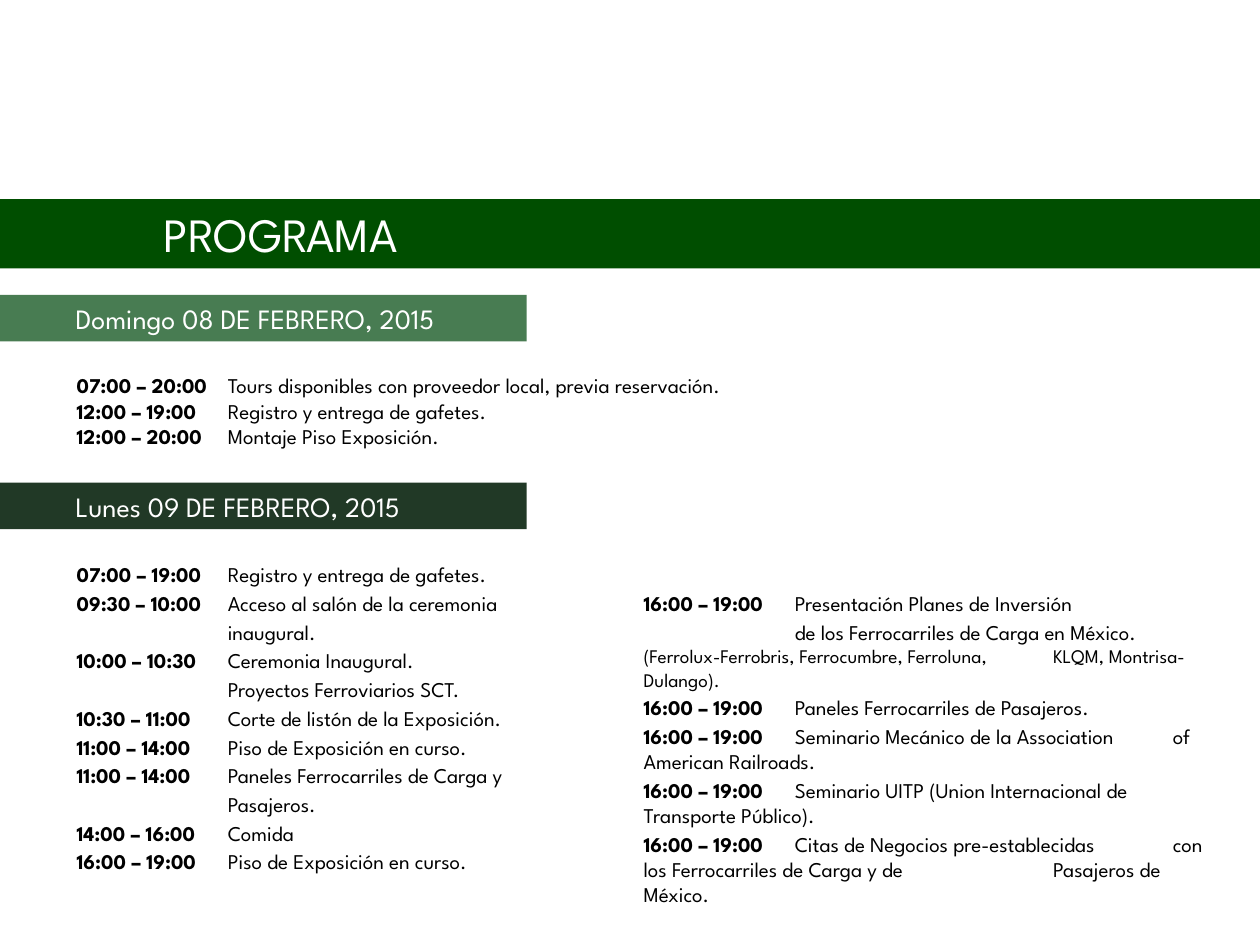
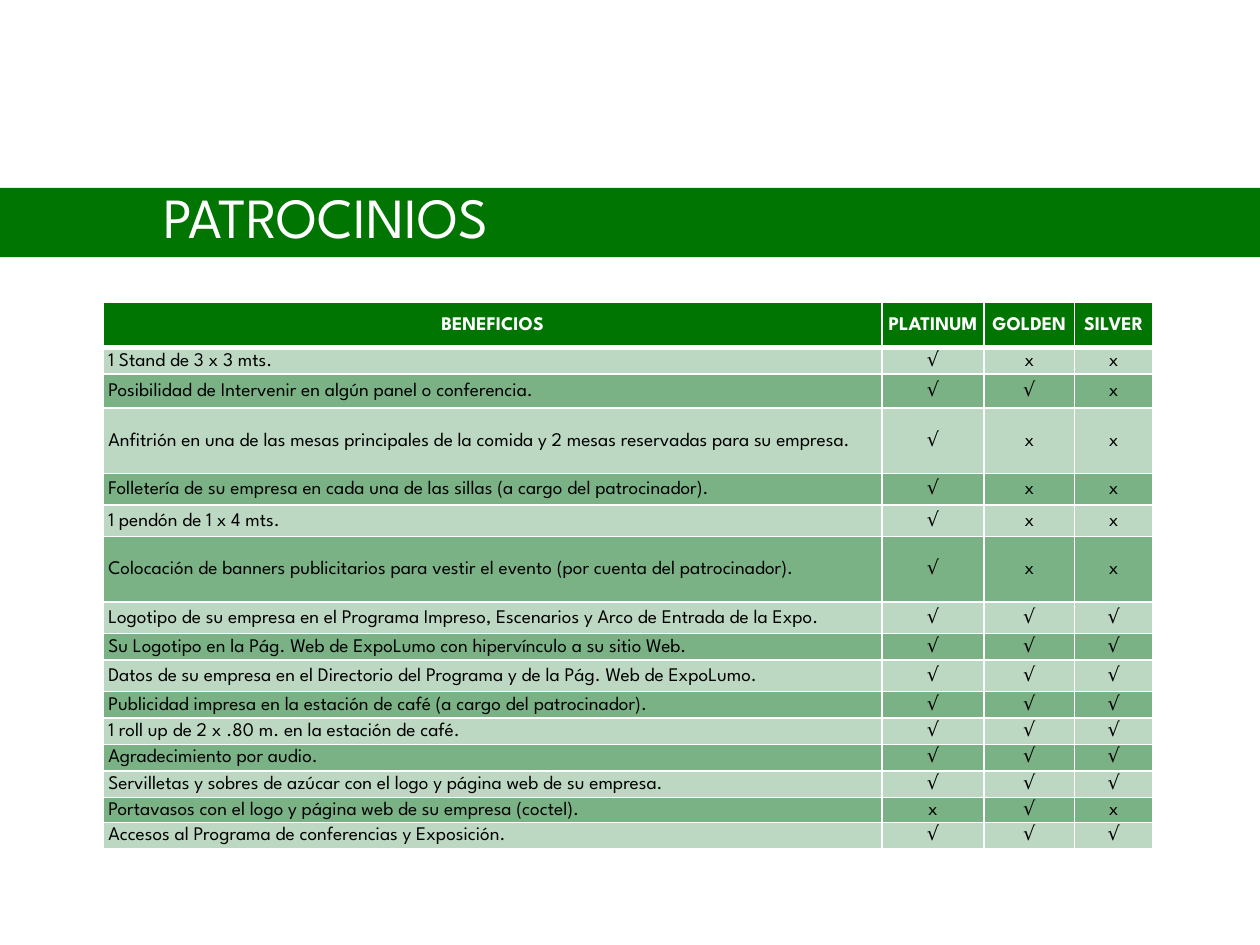
import dataclasses

import lxml.etree
import pptx
import pptx.dml.color
import pptx.enum.shapes
import pptx.enum.text
import pptx.oxml.ns
import pptx.util

Inches = pptx.util.Inches
Pt = pptx.util.Pt
ALIGN = pptx.enum.text.PP_ALIGN
MIDDLE = pptx.enum.text.MSO_ANCHOR.MIDDLE


@dataclasses.dataclass(frozen=True)
class Theme:
    """Hold the colours, font and type sizes of the deck."""
    font: str = "League Spartan"
    white: str = "FFFFFF"
    black: str = "000000"
    forest: str = "004E00"
    green: str = "007501"
    sage: str = "487C52"
    pine: str = "213926"
    pale: str = "BCD8C2"
    mint: str = "7AB286"
    day: float = 16
    body: float = 12
    note: float = 11
    cell: float = 11
    rule: float = 1
    heavy: float = 3


THEME = Theme()
STOPS = (1.2, 3.25, 4.2)

SUNDAY = [
    ("07:00 – 20:00", "Tours disponibles con proveedor local, previa reservación."),
    ("12:00 – 19:00", "Registro y entrega de gafetes."),
    ("12:00 – 20:00", "Montaje Piso Exposición."),
]
MONDAY = [
    ("07:00 – 19:00", "Registro y entrega de gafetes."),
    ("09:30 – 10:00", "Acceso al salón de la ceremonia"),
    ("", "inaugural."),
    ("10:00 – 10:30", "Ceremonia Inaugural."),
    ("", "Proyectos Ferroviarios SCT."),
    ("10:30 – 11:00", "Corte de listón de la Exposición."),
    ("11:00 – 14:00", "Piso de Exposición en curso."),
    ("11:00 – 14:00", "Paneles Ferrocarriles de Carga y"),
    ("", "Pasajeros."),
    ("14:00 – 16:00", "Comida"),
    ("16:00 – 19:00", "Piso de Exposición en curso."),
]
EVENING = [
    ("16:00 – 19:00", "Presentación Planes de Inversión"),
    ("", "de los Ferrocarriles de Carga en México."),
    (None, "(Ferrolux-Ferrobris, Ferrocumbre, Ferroluna,\tKLQM, Montrisa-Dulango)."),
    ("16:00 – 19:00", "Paneles Ferrocarriles de Pasajeros."),
    ("16:00 – 19:00", "Seminario Mecánico de la Association\tof American Railroads."),
    ("16:00 – 19:00", "Seminario UITP (Union Internacional de Transporte Público)."),
    ("16:00 – 19:00", "Citas de Negocios pre-establecidas\tcon los Ferrocarriles "
                      "de Carga y de\tPasajeros de México."),
]

HEADS = ("BENEFICIOS", "PLATINUM", "GOLDEN", "SILVER")
WIDTHS = (6.18, 0.81, 0.72, 0.62)
HEAD_HIGH = 0.36
PERKS = [
    (0.21, "1 Stand de 3 x 3 mts.", "√xx"),
    (0.27, "Posibilidad de Intervenir en algún panel o conferencia.", "√√x"),
    (0.52, "Anfitrión en una de las mesas principales de la comida y 2 mesas "
           "reservadas para su empresa.", "√xx"),
    (0.25, "Folletería de su empresa en cada una de las sillas "
           "(a cargo del patrocinador).", "√xx"),
    (0.25, "1 pendón de 1 x 4 mts.", "√xx"),
    (0.52, "Colocación de banners publicitarios para vestir el evento "
           "(por cuenta del patrocinador).", "√xx"),
    (0.25, "Logotipo de su empresa en el Programa Impreso, Escenarios y "
           "Arco de Entrada de la Expo.", "√√√"),
    (0.21, "Su Logotipo en la Pág. Web de ExpoLumo con hipervínculo a su "
           "sitio Web.", "√√√"),
    (0.25, "Datos de su empresa en el Directorio del Programa y de la "
           "Pág. Web de ExpoLumo.", "√√√"),
    (0.21, "Publicidad impresa en la estación de café "
           "(a cargo del patrocinador).", "√√√"),
    (0.21, "1 roll up de 2 x .80 m. en la estación de café.", "√√√"),
    (0.21, "Agradecimiento por audio.", "√√√"),
    (0.21, "Servilletas y sobres de azúcar con el logo y página web de su "
           "empresa.", "√√√"),
    (0.2, "Portavasos con el logo y página web de su empresa (coctel).", "x√x"),
    (0.21, "Accesos al Programa de conferencias y Exposición.", "√√√"),
]


def paint(fill, tone):
    """Fill with one solid colour."""
    fill.solid()
    fill.fore_color.rgb = pptx.dml.color.RGBColor.from_string(tone)


def style(run, size, tone, bold=False):
    """Set the type of one run."""
    font = run.font
    font.name, font.size, font.bold = THEME.font, Pt(size), bold
    font.color.rgb = pptx.dml.color.RGBColor.from_string(tone)


def band(slide, box, text, tone, size, inset, lead=None):
    """Draw a coloured band with its white heading."""
    shape = slide.shapes.add_shape(
        pptx.enum.shapes.MSO_SHAPE.RECTANGLE, *map(Inches, box))
    shape.shadow.inherit = False
    paint(shape.fill, tone)
    shape.line.fill.background()
    frame = shape.text_frame
    frame.text = text
    frame.word_wrap = True
    frame.vertical_anchor = MIDDLE
    frame.margin_left = Inches(inset)
    para = frame.paragraphs[0]
    para.alignment = ALIGN.LEFT
    para.line_spacing = lead
    style(para.runs[0], size, THEME.white)


def title(slide, top, text, tone, size, lead=None):
    """Draw the title band across the slide."""
    band(slide, (0, top, 10.04, 0.55), text, tone, size, 1.3, lead)


def set_tabs(para):
    """Give a paragraph the tab stops of the agenda."""
    qn = pptx.oxml.ns.qn
    tabs = lxml.etree.SubElement(para._p.get_or_add_pPr(), qn("a:tabLst"))
    for stop in STOPS:
        lxml.etree.SubElement(tabs, qn("a:tab"), pos=str(Inches(stop)), algn="l")


def agenda(slide, box, items, gap=0):
    """List hours in bold, each with its event; None marks a small note."""
    frame = slide.shapes.add_textbox(*map(Inches, box)).text_frame
    frame.word_wrap = True
    for i, (hour, event) in enumerate(items):
        para = frame.add_paragraph() if i else frame.paragraphs[0]
        set_tabs(para)
        note = hour is None
        if i and not note:
            para.space_before = Pt(gap)
        if hour:
            run = para.add_run()
            run.text = hour
            style(run, THEME.body, THEME.black, True)
        run = para.add_run()
        run.text = event if note else "\t" + event
        style(run, THEME.note if note else THEME.body, THEME.black)


def day(slide, left, top, text, tone, lists):
    """Draw a day band and the lists under it."""
    band(slide, (left, top, 4.18, 0.37), text, tone, THEME.day, 0.6)
    for (x, y, wide, high), items, gap in lists:
        agenda(slide, (left + x, top + y, wide, high), items, gap)


def edge(cell, above, below):
    """Rule the four sides of a cell in white."""
    qn = pptx.oxml.ns.qn
    props = cell._tc.get_or_add_tcPr()
    sides = dict(L=THEME.rule, R=THEME.rule, T=above, B=below)
    for side, width in sides.items():
        line = lxml.etree.SubElement(props, qn("a:ln" + side), w=str(Pt(width)))
        fill = lxml.etree.SubElement(line, qn("a:solidFill"))
        lxml.etree.SubElement(fill, qn("a:srgbClr"), val=THEME.white)


def perks(slide, left, top):
    """Draw the table of benefits by level."""
    rows = [(HEAD_HIGH, HEADS)] + [(h, (name, *marks)) for h, name, marks in PERKS]
    size = (sum(WIDTHS), sum(high for high, _ in rows))
    grid = slide.shapes.add_table(
        len(rows), len(HEADS), *map(Inches, (left, top, *size))).table
    for col, wide in zip(grid.columns, WIDTHS):
        col.width = Inches(wide)
    for r, (high, texts) in enumerate(rows):
        grid.rows[r].height = Inches(high)
        head = r == 0
        tone = THEME.green if head else (THEME.mint, THEME.pale)[r % 2]
        for c, text in enumerate(texts):
            cell = grid.cell(r, c)
            label = c == 0 and not head
            edge(cell, THEME.heavy if r == 1 else THEME.rule,
                 THEME.heavy if head else THEME.rule)
            paint(cell.fill, tone)
            cell.vertical_anchor = MIDDLE
            cell.margin_left = Inches(0.04 if label else 0.01)
            cell.margin_right = cell.margin_top = Inches(0.01)
            cell.margin_bottom = 0
            cell.text_frame.text = text
            para = cell.text_frame.paragraphs[0]
            para.alignment = ALIGN.LEFT if label else ALIGN.CENTER
            style(para.runs[0], THEME.cell,
                  THEME.white if head else THEME.black, head)


def program(slide):
    """Build the agenda slide."""
    title(slide, 1.58, "PROGRAMA", THEME.forest, 27.3)
    day(slide, 0, 2.34, "Domingo 08 DE FEBRERO, 2015", THEME.sage,
        [((0.51, 0.57, 7.49, 0.71), SUNDAY, 0)])
    day(slide, 0, 3.83, "Lunes 09 DE FEBRERO, 2015", THEME.pine,
        [((0.51, 0.58, 4.5, 2.83), MONDAY, 2),
         ((5.01, 0.81, 4.7, 2.6), EVENING, 2)])


def sponsors(slide):
    """Build the sponsorship slide."""
    title(slide, 1.49, "PATROCINIOS", THEME.green, 32.4, 0.8)
    perks(slide, 0.82, 2.4)


def main():
    """Build and save the deck."""
    deck = pptx.Presentation()
    deck.slide_width, deck.slide_height = Inches(10), Inches(7.5)
    for build in (program, sponsors):
        build(deck.slides.add_slide(deck.slide_layouts[6]))
    deck.save("out.pptx")


if __name__ == "__main__":
    main()
